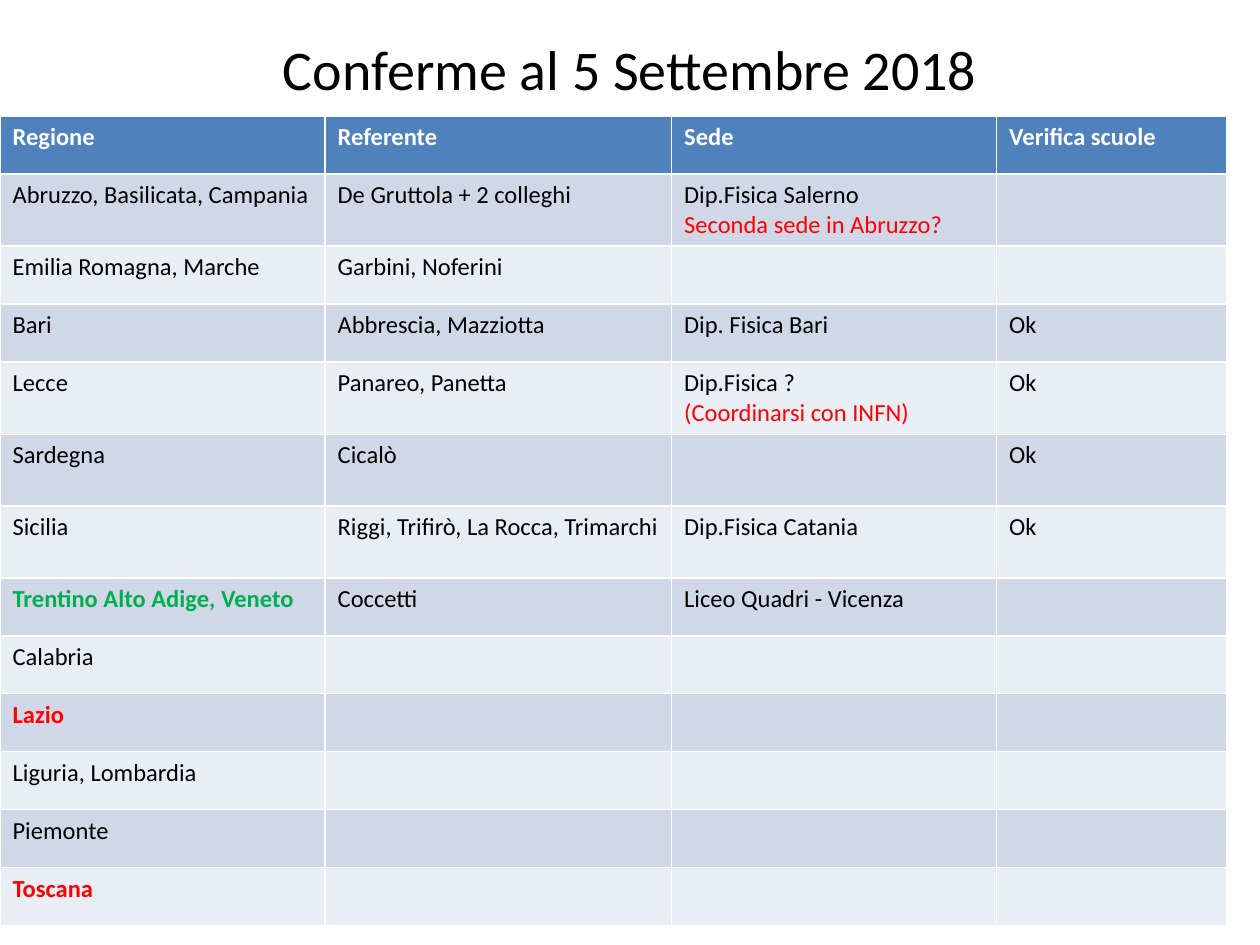
import pptx
import pptx.util
import pptx.dml.color
import pptx.enum.text

Inches = pptx.util.Inches
BLACK, WHITE, RED, GREEN = "000000", "FFFFFF", "FF0000", "00B050"
HEAD, BANDS = "4F81BD", ("D0D8E8", "E9EDF4")

WIDTHS = (2.58, 2.75, 2.58, 1.83)
LOW, TALL = 0.46, 0.57
TALL_ROWS = (1, 4, 5, 6)

ROWS = [
    ("Regione", "Referente", "Sede", "Verifica scuole"),
    ("Abruzzo, Basilicata, Campania", "De Gruttola + 2 colleghi",
     "Dip.Fisica Salerno\nSeconda sede in Abruzzo?", ""),
    ("Emilia Romagna, Marche", "Garbini, Noferini", "", ""),
    ("Bari", "Abbrescia, Mazziotta", "Dip. Fisica Bari", "Ok"),
    ("Lecce", "Panareo, Panetta", "Dip.Fisica ?\n(Coordinarsi con INFN)", "Ok"),
    ("Sardegna", "Cicalò", "", "Ok"),
    ("Sicilia", "Riggi, Trifirò, La Rocca, Trimarchi", "Dip.Fisica Catania", "Ok"),
    ("Trentino Alto Adige, Veneto", "Coccetti", "Liceo Quadri - Vicenza", ""),
    ("Calabria", "", "", ""),
    ("Lazio", "", "", ""),
    ("Liguria, Lombardia", "", "", ""),
    ("Piemonte", "", "", ""),
    ("Toscana", "", "", ""),
]
MARKED = {"Trentino Alto Adige, Veneto": GREEN, "Lazio": RED, "Toscana": RED}


def paint(target, color):
    """Set a solid fill or a font colour from a hex string."""
    rgb = pptx.dml.color.RGBColor.from_string(color)
    if hasattr(target, "solid"):
        target.solid()
        target.fore_color.rgb = rgb
    else:
        target.color.rgb = rgb


def style(para, size, color, bold=False):
    for run in para.runs:
        run.font.name = "Calibri"
        run.font.size = pptx.util.Pt(size)
        run.font.bold = bold
        paint(run.font, color)


def add_title(slide, left, top, width, height):
    title = slide.shapes.title
    title.left, title.top = Inches(left), Inches(top)
    title.width, title.height = Inches(width), Inches(height)
    frame = title.text_frame
    frame.text = "Conferme al 5 Settembre 2018"
    frame.vertical_anchor = pptx.enum.text.MSO_ANCHOR.MIDDLE
    frame.paragraphs[0].alignment = pptx.enum.text.PP_ALIGN.CENTER
    style(frame.paragraphs[0], 32, BLACK)


def fill_cell(cell, text, row):
    paint(cell.fill, BANDS[(row - 1) % 2] if row else HEAD)
    if not text:
        return
    cell.text_frame.text = text
    for line, para in enumerate(cell.text_frame.paragraphs):
        if row == 0:
            style(para, 14, WHITE, True)
        elif line:  # second lines are open questions
            style(para, 14, RED)
        else:
            style(para, 14, MARKED.get(text, BLACK), text in MARKED)


def add_grid(slide, left, top, width, height):
    grid = slide.shapes.add_table(
        len(ROWS), len(WIDTHS), Inches(left), Inches(top),
        Inches(width), Inches(height)).table
    for col, size in zip(grid.columns, WIDTHS):
        col.width = Inches(size)
    for row, texts in enumerate(ROWS):
        grid.rows[row].height = Inches(TALL if row in TALL_ROWS else LOW)
        for col, text in enumerate(texts):
            fill_cell(grid.cell(row, col), text, row)


def main():
    deck = pptx.Presentation()
    deck.slide_width, deck.slide_height = Inches(10), Inches(7.5)
    slide = deck.slides.add_slide(deck.slide_layouts[5])
    add_title(slide, 0, 0, 10, 1.08)
    add_grid(slide, 0, 0.92, sum(WIDTHS), 6.38)
    deck.save("out.pptx")


if __name__ == "__main__":
    main()
